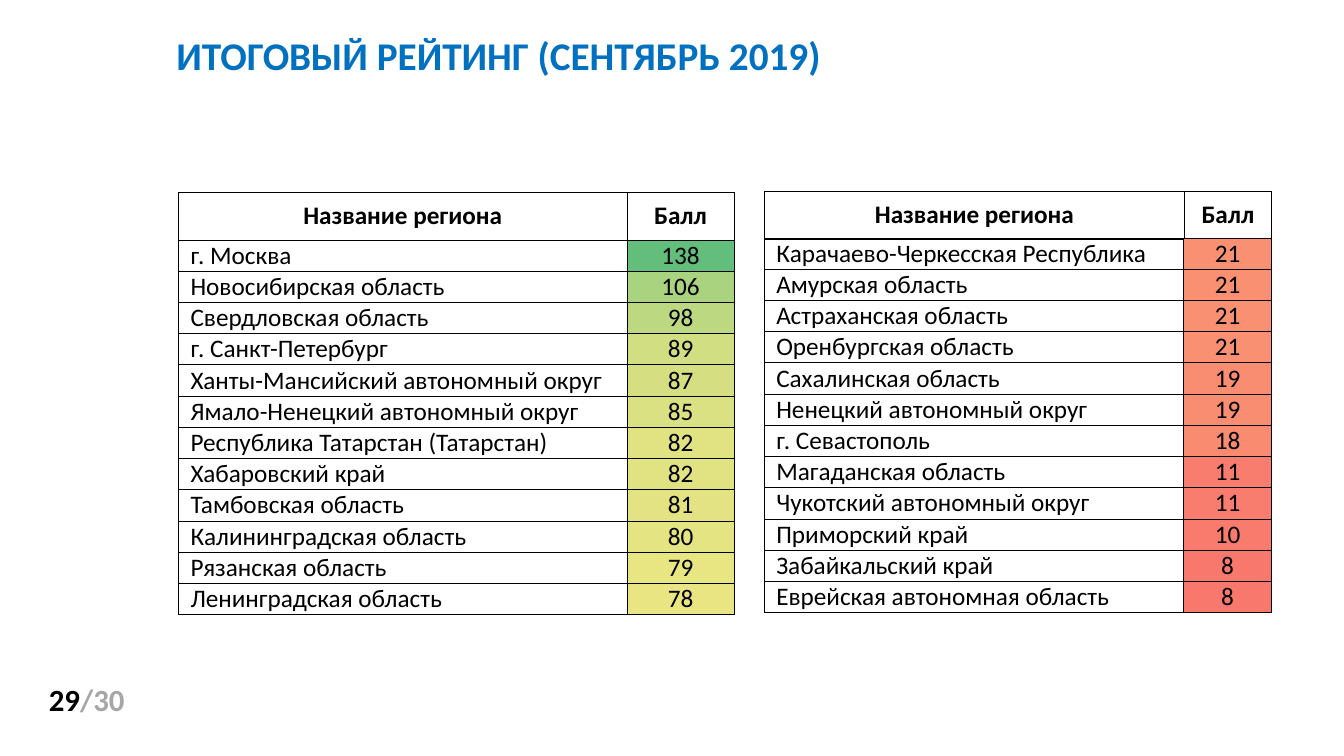
from lxml.etree import SubElement
from pptx import Presentation
from pptx.dml.color import RGBColor
from pptx.enum.text import MSO_ANCHOR, MSO_AUTO_SIZE, PP_ALIGN
from pptx.oxml.ns import qn
from pptx.util import Pt

PX = 9144
FONT = "Calibri"
BLACK = "000000"
HEADER_H, ROW_H = 47, 31

HEADER = [("Название региона", "Балл", None)]
LEADERS = [
    ("г. Москва", "138", "63BE7B"),
    ("Новосибирская область", "106", "AAD380"),
    ("Свердловская область", "98", "BCD881"),
    ("г. Санкт-Петербург", "89", "D1DE82"),
    ("Ханты-Мансийский автономный округ", "87", "D5DF82"),
    ("Ямало-Ненецкий автономный округ", "85", "DAE182"),
    ("Республика Татарстан (Татарстан)", "82", "E1E383"),
    ("Хабаровский край", "82", "E1E383"),
    ("Тамбовская область", "81", "E3E383"),
    ("Калининградская область", "80", "E5E483"),
    ("Рязанская область", "79", "E8E583"),
    ("Ленинградская область", "78", "EAE583"),
]
OUTSIDERS = [
    ("Карачаево-Черкесская Республика", "21", "FA9072"),
    ("Амурская область", "21", "FA9072"),
    ("Астраханская область", "21", "FA9072"),
    ("Оренбургская область", "21", "FA9072"),
    ("Сахалинская область", "19", "F98D71"),
    ("Ненецкий автономный округ", "19", "F98D71"),
    ("г. Севастополь", "18", "F98B71"),
    ("Магаданская область", "11", "F97D6F"),
    ("Чукотский автономный округ", "11", "F97D6F"),
    ("Приморский край", "10", "F97B6E"),
    ("Забайкальский край", "8", "F8786D"),
    ("Еврейская автономная область", "8", "F8786D"),
]


def px(n):
    return n * PX


def rgb(color):
    return RGBColor.from_string(color)


def add_run(p, text, size, color=BLACK, bold=False):
    r = p.add_run()
    r.text = text
    r.font.name = FONT
    r.font.size = Pt(size)
    r.font.bold = bold
    r.font.color.rgb = rgb(color)


def add_title(s, text):
    sp = s.shapes.title
    sp.left, sp.top, sp.width, sp.height = px(165), px(34), px(1144), px(536)
    tf = sp.text_frame
    tf.word_wrap = True
    tf.auto_size = MSO_AUTO_SIZE.NONE
    tf.vertical_anchor = MSO_ANCHOR.TOP
    p = tf.paragraphs[0]
    p.alignment = PP_ALIGN.LEFT
    p.line_spacing = Pt(28)
    p.space_before = Pt(0)
    p.space_after = Pt(12)
    add_run(p, text, 28, "0070C0", True)


def add_page_number(s, number, total):
    sp = s.shapes.add_textbox(px(29), px(670), px(114), px(47))
    tf = sp.text_frame
    tf.word_wrap = True
    tf.auto_size = MSO_AUTO_SIZE.SHAPE_TO_FIT_TEXT
    p = tf.paragraphs[0]
    p.alignment = PP_ALIGN.CENTER
    add_run(p, number, 22, BLACK, True)
    add_run(p, f"/{total}", 22, "A6A6A6", True)


def add_borders(cell):
    tc_pr = cell._tc.get_or_add_tcPr()
    for side in ("a:lnL", "a:lnR", "a:lnT", "a:lnB"):
        ln = SubElement(tc_pr, qn(side), w=str(Pt(0.5)))
        fill = SubElement(ln, qn("a:solidFill"))
        SubElement(fill, qn("a:srgbClr"), val=BLACK)


def fill_cell(cell, text, align, fill, bold, indent):
    cell.margin_left, cell.margin_right = px(indent), px(1)
    cell.margin_top = cell.margin_bottom = 0
    cell.vertical_anchor = MSO_ANCHOR.MIDDLE
    add_borders(cell)
    if fill:
        cell.fill.solid()
        cell.fill.fore_color.rgb = rgb(fill)
    else:
        cell.fill.background()
    p = cell.text_frame.paragraphs[0]
    p.alignment = align
    add_run(p, text, 18, BLACK, bold)


def add_rating(s, left, top, widths, rows):
    heights = [ROW_H if color else HEADER_H for _, _, color in rows]
    table = s.shapes.add_table(len(rows), len(widths), px(left), px(top),
                               px(sum(widths)), px(sum(heights))).table
    table.first_row = table.horz_banding = False
    for column, width in zip(table.columns, widths):
        column.width = px(width)
    for i, (region, score, color) in enumerate(rows):
        table.rows[i].height = px(heights[i])
        is_header = color is None
        align = PP_ALIGN.CENTER if is_header else PP_ALIGN.LEFT
        indent = 1 if is_header else 12
        fill_cell(table.cell(i, 0), region, align, None, is_header, indent)
        fill_cell(table.cell(i, 1), score, PP_ALIGN.CENTER, color, is_header, 1)


def main():
    prs = Presentation()
    prs.slide_width, prs.slide_height = px(1333), px(750)
    s = prs.slides.add_slide(prs.slide_layouts[5])
    add_title(s, "ИТОГОВЫЙ РЕЙТИНГ (СЕНТЯБРЬ 2019)")
    add_page_number(s, "29", "30")
    add_rating(s, 177, 191, (445, 106), HEADER + LEADERS)
    add_rating(s, 758, 190, (417, 86), HEADER)
    add_rating(s, 758, 236, (416, 87), OUTSIDERS)
    prs.save("out.pptx")


if __name__ == "__main__":
    main()
